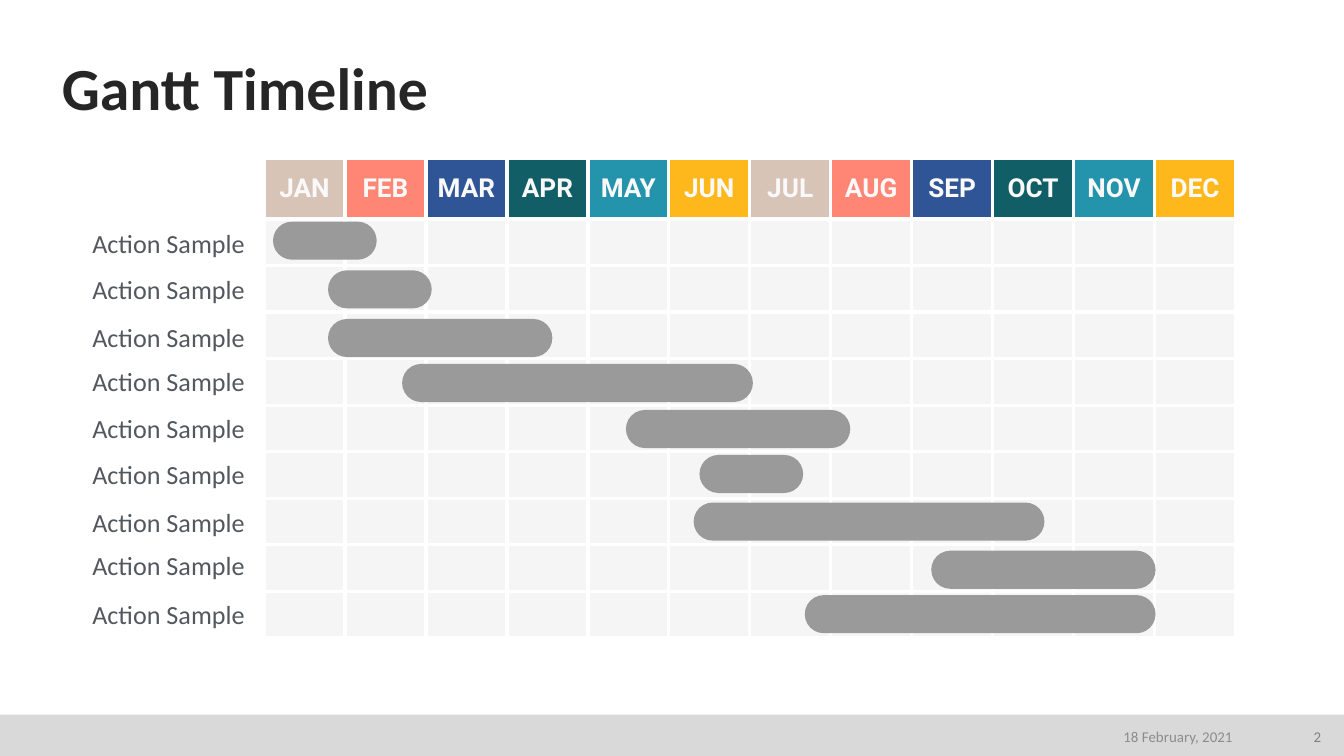
from dataclasses import dataclass

from lxml import etree
from pptx import Presentation
from pptx.dml.color import RGBColor
from pptx.enum.shapes import MSO_SHAPE
from pptx.enum.text import MSO_ANCHOR, PP_ALIGN
from pptx.oxml.ns import qn
from pptx.slide import Slide
from pptx.table import _Cell
from pptx.text.text import TextFrame
from pptx.util import Cm, Pt

RECTANGLE, PILL = MSO_SHAPE.RECTANGLE, MSO_SHAPE.ROUNDED_RECTANGLE
MIDDLE, BOTTOM = MSO_ANCHOR.MIDDLE, MSO_ANCHOR.BOTTOM
LEFT, CENTER, RIGHT = PP_ALIGN.LEFT, PP_ALIGN.CENTER, PP_ALIGN.RIGHT

COLORS = {
    "title": "262626", "month": "F9F9F9", "label": "53585F",
    "date": "8C8C8C", "number": "808080", "footer": "D9D9D9",
    "cell": "F5F5F5", "border": "FFFFFF", "bar": "9A9A9A",
    "sand": "D7C4B7", "coral": "FF8674", "blue": "305597",
    "green": "115E67", "teal": "2494AC", "amber": "FFB81C",
}
MONTHS = ["JAN", "FEB", "MAR", "APR", "MAY", "JUN",
          "JUL", "AUG", "SEP", "OCT", "NOV", "DEC"]
MONTH_FILLS = ["sand", "coral", "blue", "green", "teal", "amber"]

SLIDE_WIDTH, SLIDE_HEIGHT = 25.4, 14.29
MARGIN = 1.17
GRID_LEFT, GRID_TOP = 4.99, 3.0
MONTH_WIDTH, HEADER_HEIGHT, ROW_HEIGHT = 1.53, 1.14, 0.88
LABEL_WIDTH, LABEL_HEIGHT, BAR_HEIGHT = 3.56, 0.76, 0.72
FOOTER_TOP, FOOTER_TEXT_TOP, FOOTER_TEXT_HEIGHT = 13.51, 13.59, 0.66
SHORT, MEDIUM, LONG = 1.96, 4.24, 6.63


@dataclass
class Action:
    """One timeline row; lengths in centimetres."""
    label_top: float
    bar_left: float
    bar_top: float
    bar_width: float
    name: str = "Action Sample"


@dataclass
class TextStyle:
    size: float
    color: str
    align: PP_ALIGN
    font: str = "Calibri"
    bold: bool = False


ACTIONS = [
    Action(4.22, 5.16, 4.19, SHORT),
    Action(5.08, 6.20, 5.11, SHORT),
    Action(6.00, 6.20, 6.03, MEDIUM),
    Action(6.83, 7.60, 6.88, LONG),
    Action(7.72, 11.83, 7.75, MEDIUM),
    Action(8.59, 13.22, 8.60, SHORT),
    Action(9.49, 13.11, 9.50, LONG),
    Action(10.31, 17.60, 10.41, MEDIUM),
    Action(11.23, 15.21, 11.25, LONG),
]
TITLE_STYLE = TextStyle(32, "title", LEFT, bold=True)
MONTH_STYLE = TextStyle(14, "month", CENTER, "Roboto", True)
LABEL_STYLE = TextStyle(14, "label", RIGHT)
DATE_STYLE = TextStyle(8, "date", RIGHT)
NUMBER_STYLE = TextStyle(8, "number", RIGHT)


def rgb(name: str) -> RGBColor:
    return RGBColor.from_string(COLORS[name])


def write(frame: TextFrame, text: str, style: TextStyle) -> None:
    frame.text = text
    paragraph = frame.paragraphs[0]
    paragraph.alignment = style.align
    font = paragraph.runs[0].font
    font.name, font.size, font.bold = style.font, Pt(style.size), style.bold
    font.color.rgb = rgb(style.color)


def set_insets(holder: TextFrame | _Cell, inset: float) -> None:
    holder.margin_left = holder.margin_right = Cm(inset)
    holder.margin_top = holder.margin_bottom = Cm(inset)


def add_title(slide: Slide, text: str) -> None:
    title = slide.shapes.title
    title.left, title.top = Cm(MARGIN), Cm(1.02)
    title.width, title.height = Cm(23.11), Cm(1.32)
    frame = title.text_frame
    write(frame, text, TITLE_STYLE)
    frame.vertical_anchor = BOTTOM
    frame.paragraphs[0].line_spacing = 0.9
    set_insets(frame, 0)


def add_text(slide: Slide, text: str, left: float, top: float, width: float,
             height: float, style: TextStyle) -> TextFrame:
    box = slide.shapes.add_textbox(Cm(left), Cm(top), Cm(width), Cm(height))
    frame = box.text_frame
    frame.word_wrap = True
    frame.vertical_anchor = MIDDLE
    write(frame, text, style)
    return frame


def add_block(slide: Slide, kind: MSO_SHAPE, left: float, top: float,
              width: float, height: float, color: str) -> None:
    block = slide.shapes.add_shape(
        kind, Cm(left), Cm(top), Cm(width), Cm(height))
    block.shadow.inherit = False
    block.fill.solid()
    block.fill.fore_color.rgb = rgb(color)
    block.line.fill.background()
    if kind == PILL:
        block.adjustments[0] = 0.5


def style_cell(cell: _Cell, color: str) -> None:
    """Fill the cell and give it a border on all four sides."""
    cell.fill.solid()
    cell.fill.fore_color.rgb = rgb(color)
    properties = cell._tc.get_or_add_tcPr()
    for index, side in enumerate(("a:lnL", "a:lnR", "a:lnT", "a:lnB")):
        border = etree.Element(qn(side), w=str(Pt(2)))
        fill = etree.SubElement(border, qn("a:solidFill"))
        etree.SubElement(fill, qn("a:srgbClr"), val=COLORS["border"])
        properties.insert(index, border)


def add_month_grid(slide: Slide) -> None:
    grid = slide.shapes.add_table(
        len(ACTIONS) + 1, len(MONTHS), Cm(GRID_LEFT), Cm(GRID_TOP),
        Cm(MONTH_WIDTH * len(MONTHS)),
        Cm(HEADER_HEIGHT + ROW_HEIGHT * len(ACTIONS))).table
    grid.horz_banding = False
    grid.first_row = False
    for column in grid.columns:
        column.width = Cm(MONTH_WIDTH)
    for index, row in enumerate(grid.rows):
        row.height = Cm(ROW_HEIGHT if index else HEADER_HEIGHT)
        for month_index, cell in enumerate(row.cells):
            if index:
                set_insets(cell, 0)
                style_cell(cell, "cell")
                continue
            write(cell.text_frame, MONTHS[month_index], MONTH_STYLE)
            cell.vertical_anchor = MIDDLE
            set_insets(cell, 0.15)
            style_cell(cell, MONTH_FILLS[month_index % len(MONTH_FILLS)])


def add_actions(slide: Slide) -> None:
    for action in ACTIONS:
        label = add_text(slide, action.name, MARGIN, action.label_top,
                         LABEL_WIDTH, LABEL_HEIGHT, LABEL_STYLE)
        set_insets(label, 0.1)
    for action in ACTIONS:
        add_block(slide, PILL, action.bar_left, action.bar_top,
                  action.bar_width, BAR_HEIGHT, "bar")


def main() -> None:
    presentation = Presentation()
    presentation.slide_width = Cm(SLIDE_WIDTH)
    presentation.slide_height = Cm(SLIDE_HEIGHT)
    slide = presentation.slides.add_slide(presentation.slide_layouts[5])
    add_block(slide, RECTANGLE, 0, FOOTER_TOP, SLIDE_WIDTH,
              SLIDE_HEIGHT - FOOTER_TOP, "footer")
    add_title(slide, "Gantt Timeline")
    add_month_grid(slide)
    add_actions(slide)
    add_text(slide, "18 February, 2021", 17.83, FOOTER_TEXT_TOP, 5.72,
             FOOTER_TEXT_HEIGHT, DATE_STYLE)
    add_text(slide, "2", 24.28, FOOTER_TEXT_TOP, 0.94,
             FOOTER_TEXT_HEIGHT, NUMBER_STYLE)
    presentation.save("out.pptx")


if __name__ == "__main__":
    main()
